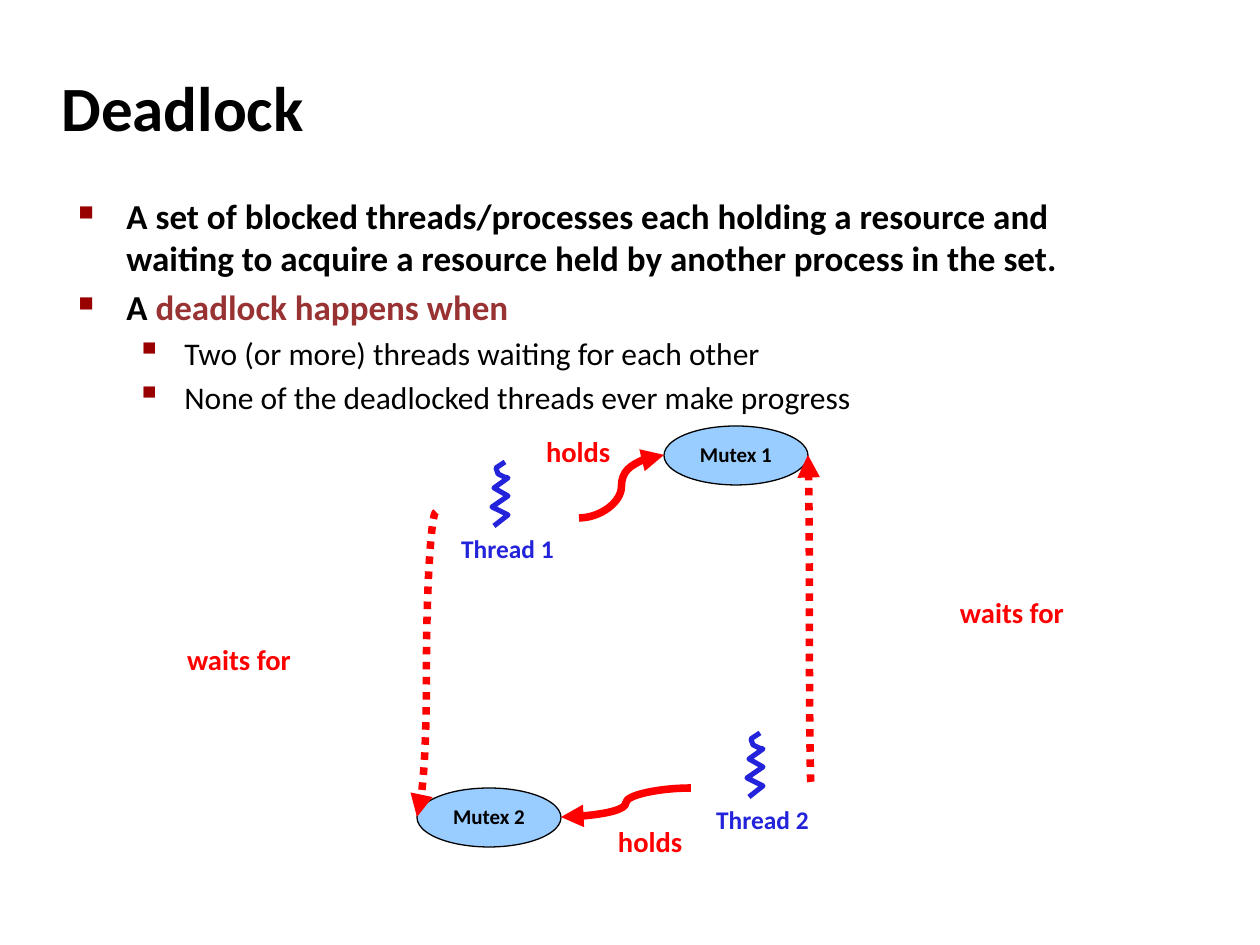
import pptx
import pptx.util
import pptx.dml.color
import pptx.enum.dml
import pptx.enum.shapes
import pptx.enum.text
import pptx.oxml
import pptx.oxml.ns
from lxml import etree

PX = 7257
RED, BLUE, BLACK, MAROON = "FF0000", "2323DC", "000000", "990000"
CENTER = pptx.enum.text.PP_ALIGN.CENTER
MIDDLE = pptx.enum.text.MSO_ANCHOR.MIDDLE
qn = pptx.oxml.ns.qn


def color(value):
    return pptx.dml.color.RGBColor.from_string(value)


def write(text, *, paragraph, size, fill=BLACK, bold=True, align=None, spacing=None):
    run = paragraph.add_run()
    run.text = text
    run.font.name = "Calibri"
    run.font.size = pptx.util.Pt(size)
    run.font.bold = bold
    run.font.color.rgb = color(fill)
    if align is not None:
        paragraph.alignment = align
    if spacing is not None:
        paragraph.line_spacing = spacing


presentation = pptx.Presentation()
presentation.slide_width = pptx.util.Inches(10)
presentation.slide_height = pptx.util.Inches(7.5)
slide = presentation.slides.add_slide(presentation.slide_layouts[6])
shapes = slide.shapes

title = shapes.add_textbox(49 * PX, 60 * PX, 1046 * PX, 105 * PX)
title.text_frame.word_wrap = True
title.text_frame.vertical_anchor = MIDDLE
write("Deadlock", paragraph=title.text_frame.paragraphs[0], size=36, spacing=0.82)

body = shapes.add_textbox(54 * PX, 188 * PX, 1089 * PX, 685 * PX)
body.text_frame.word_wrap = True
bullets = [
    (0, [("A set of blocked threads/processes each holding a resource and waiting to "
          "acquire a resource held by another process in the set.", BLACK)]),
    (0, [("A ", BLACK), ("deadlock happens when", "993333")]),
    (1, [("Two (or more) threads waiting for each other", BLACK)]),
    (1, [("None of the deadlocked threads ever make progress", BLACK)]),
]
levels = [(60, 20, True, "■", "60000"), (118, 18, False, "▪", "110000")]
for index, (level, parts) in enumerate(bullets):
    margin, size, bold, mark, percent = levels[level]
    frame = body.text_frame
    paragraph = frame.add_paragraph() if index else frame.paragraphs[0]
    paragraph.level = level
    paragraph.space_before = pptx.util.Pt(size * 0.2)
    for text, fill in parts:
        write(text, paragraph=paragraph, size=size, fill=fill, bold=bold)
    properties = paragraph._p.get_or_add_pPr()
    properties.set("marL", str(margin * PX))
    properties.set("indent", str(-48 * PX))
    bullet_color = etree.SubElement(properties, qn("a:buClr"))
    etree.SubElement(bullet_color, qn("a:srgbClr"), val=MAROON)
    etree.SubElement(properties, qn("a:buSzPct"), val=percent)
    etree.SubElement(properties, qn("a:buChar"), char=mark)

for text, left, top in [("Mutex 1", 664, 426), ("Mutex 2", 417, 788)]:
    mutex = shapes.add_shape(pptx.enum.shapes.MSO_SHAPE.OVAL,
                             left * PX, top * PX, 144 * PX, 59 * PX)
    mutex.shadow.inherit = False
    mutex.fill.solid()
    mutex.fill.fore_color.rgb = color("99CCFF")
    mutex.line.color.rgb = color(BLACK)
    mutex.line.width = pptx.util.Pt(0.75)
    mutex.text_frame.vertical_anchor = MIDDLE
    write(text, paragraph=mutex.text_frame.paragraphs[0], size=12,
          align=CENTER, spacing=0.9)

squiggle = [(-9, 6), (-7, 12), (-1, 15), (3, 16), (-11, 26),
            (3, 34), (-13, 45), (3, 53), (-11, 64)]
for left, top in [(505, 462), (760, 733)]:
    builder = shapes.build_freeform(left, top, scale=PX)
    builder.add_line_segments([(left + x, top + y) for x, y in squiggle], close=False)
    thread = builder.convert_to_shape()
    thread.shadow.inherit = False
    thread.fill.background()
    thread.line.color.rgb = color(BLUE)
    thread.line.width = pptx.util.Pt(2.89)

labels = [
    ("Thread 1", 437, 532, 141, 14.5, BLUE, CENTER),
    ("Thread 2", 692, 803, 141, 14.5, BLUE, CENTER),
    ("holds", 535, 433, 93, 16.3, RED, None),
    ("holds", 607, 823, 93, 16.3, RED, None),
    ("waits for", 949, 594, 135, 16.3, RED, None),
    ("waits for", 176, 641, 135, 16.3, RED, None),
]
for text, left, top, width, size, fill, align in labels:
    label = shapes.add_textbox(left * PX, top * PX, width * PX, 43 * PX)
    frame = label.text_frame
    frame.word_wrap = False
    frame.margin_top = frame.margin_bottom = 5 * PX
    frame.margin_left = frame.margin_right = 11 * PX
    write(text, paragraph=frame.paragraphs[0], size=size, fill=fill,
          align=align, spacing=0.9)

arrows = [
    (691, 788, 561, 817, False),
    (579, 518, 664, 455, False),
    (811, 782, 808, 455, True),
    (436, 512, 417, 817, True),
]
for start_x, start_y, end_x, end_y, waiting in arrows:
    arrow = shapes.add_connector(pptx.enum.shapes.MSO_CONNECTOR.CURVE,
                                 start_x * PX, start_y * PX, end_x * PX, end_y * PX)
    arrow.line.color.rgb = color(RED)
    arrow.line.width = pptx.util.Pt(4.31)
    if waiting:
        arrow.line.dash_style = pptx.enum.dml.MSO_LINE.ROUND_DOT
    etree.SubElement(arrow.line._get_or_add_ln(), qn("a:tailEnd"), type="triangle")
    etree.SubElement(arrow._element.spPr, qn("a:effectLst"))

presentation.save("out.pptx")
